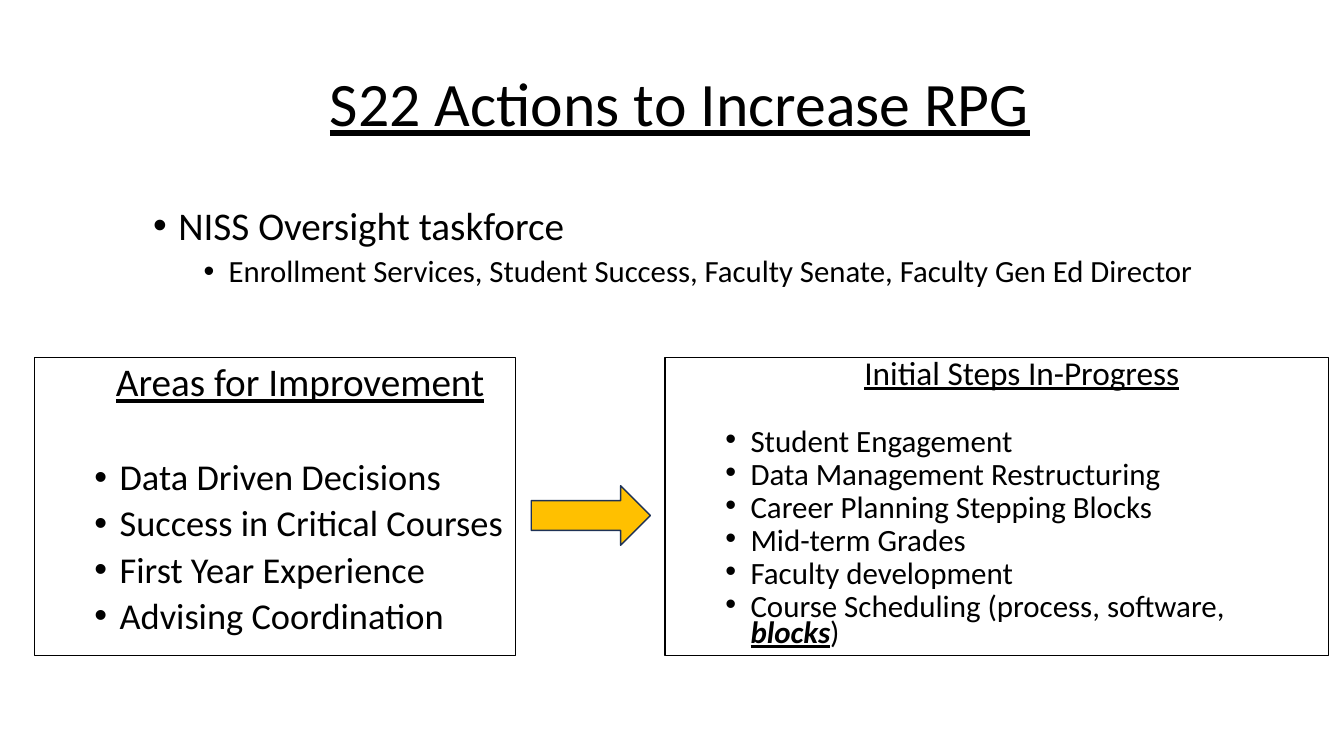
from lxml import etree
from pptx import Presentation
from pptx.dml.color import RGBColor
from pptx.enum.shapes import MSO_SHAPE
from pptx.enum.text import MSO_ANCHOR, PP_ALIGN
from pptx.oxml.ns import qn
from pptx.util import Cm, Pt

RECTANGLE = MSO_SHAPE.RECTANGLE
RIGHT_ARROW = MSO_SHAPE.RIGHT_ARROW
TOP, MIDDLE = MSO_ANCHOR.TOP, MSO_ANCHOR.MIDDLE
LEFT, CENTER = PP_ALIGN.LEFT, PP_ALIGN.CENTER
BLACK = RGBColor(0x00, 0x00, 0x00)
AMBER = RGBColor(0xFF, 0xC0, 0x00)
NAVY = RGBColor(0x1E, 0x32, 0x56)

HANGING = 0.635
HEADING_INDENT = 1.27
FIRST_LEVEL, SECOND_LEVEL = 1.905, 3.175
PANEL_TOP, PANEL_HEIGHT = 9.02, 7.49
PARAGRAPH_GAP = 5

AREAS = [
    "Data Driven Decisions",
    "Success in Critical Courses",
    "First Year Experience",
    "Advising Coordination",
]
STEPS = [
    "Student Engagement",
    "Data Management Restructuring",
    "Career Planning Stepping Blocks",
    "Mid-term Grades",
    "Faculty development",
    "Course Scheduling (process, software, ",
]


class ActionSlide:
    font = "Calibri"

    def __init__(self, presentation):
        self.slide = presentation.slides.add_slide(presentation.slide_layouts[6])

    def text_area(self, left, top, width, height, anchor=TOP):
        area = self.slide.shapes.add_textbox(Cm(left), Cm(top), Cm(width), Cm(height))
        area.text_frame.word_wrap = True
        area.text_frame.vertical_anchor = anchor
        return area.text_frame

    def shape(self, kind, left, top, width, height, line, weight, fill=None):
        shape = self.slide.shapes.add_shape(kind, Cm(left), Cm(top), Cm(width), Cm(height))
        shape.shadow.inherit = False
        shape.line.color.rgb = line
        shape.line.width = Pt(weight)
        if fill is None:
            shape.fill.background()
        else:
            shape.fill.solid()
            shape.fill.fore_color.rgb = fill
        return shape

    def run(self, paragraph, text, size, underline=False, strong=False):
        run = paragraph.add_run()
        run.text = text
        run.font.name = self.font
        run.font.size = Pt(size)
        run.font.color.rgb = BLACK
        run.font.underline = underline
        run.font.bold = run.font.italic = strong

    def paragraph(self, frame, text, size, indent=0, spacing=0.9,
                  before=PARAGRAPH_GAP, align=LEFT, underline=False):
        first = frame.paragraphs[0]
        paragraph = frame.add_paragraph() if first.runs else first
        paragraph.alignment = align
        paragraph.line_spacing = spacing
        paragraph.space_before = Pt(before)
        paragraph._p.get_or_add_pPr().set("marL", str(Cm(indent)))
        self.run(paragraph, text, size, underline)
        return paragraph

    def bullet(self, frame, text, size, indent=FIRST_LEVEL, spacing=0.9, before=PARAGRAPH_GAP):
        paragraph = self.paragraph(frame, text, size, indent, spacing, before)
        properties = paragraph._p.get_or_add_pPr()
        properties.set("indent", str(-Cm(HANGING)))
        etree.SubElement(properties, qn("a:buFont")).set("typeface", "Arial")
        etree.SubElement(properties, qn("a:buChar")).set("char", "•")
        return paragraph

    def panel(self, left, width, heading, heading_size, items, size, spacing, list_gap):
        box = self.shape(RECTANGLE, left, PANEL_TOP, width, PANEL_HEIGHT, BLACK, 0.75)
        frame = box.text_frame
        frame.word_wrap = True
        frame.vertical_anchor = TOP
        self.paragraph(frame, heading, heading_size, HEADING_INDENT, spacing,
                       align=CENTER, underline=True)
        for index, item in enumerate(items):
            before = PARAGRAPH_GAP if index else list_gap
            last = self.bullet(frame, item, size, spacing=spacing, before=before)
        return last


def main():
    presentation = Presentation()
    presentation.slide_width = Cm(33.87)
    presentation.slide_height = Cm(19.05)
    actions = ActionSlide(presentation)

    title = actions.text_area(2.34, 0.85, 29.59, 3.68, MIDDLE)
    actions.paragraph(title, "S22 Actions to Increase RPG", 44.1, before=0,
                      align=CENTER, underline=True)

    taskforce = actions.text_area(2.34, 5.08, 29.21, 2.49)
    actions.bullet(taskforce, "NISS Oversight taskforce", 28)
    actions.bullet(
        taskforce,
        "Enrollment Services, Student Success, Faculty Senate, Faculty Gen Ed Director",
        22, SECOND_LEVEL)

    actions.panel(0.86, 12.14, "Areas for Improvement", 28, AREAS, 26, 0.9, 38.5)
    scheduling = actions.panel(16.76, 16.71, "Initial Steps In-Progress", 23.8,
                               STEPS, 22.1, 0.7, 28.9)
    actions.run(scheduling, "blocks", 22.1, underline=True, strong=True)
    actions.run(scheduling, ")", 22.1)

    actions.shape(RIGHT_ARROW, 13.39, 12.24, 3, 1.5, NAVY, 1, AMBER)
    presentation.save("out.pptx")


if __name__ == "__main__":
    main()
